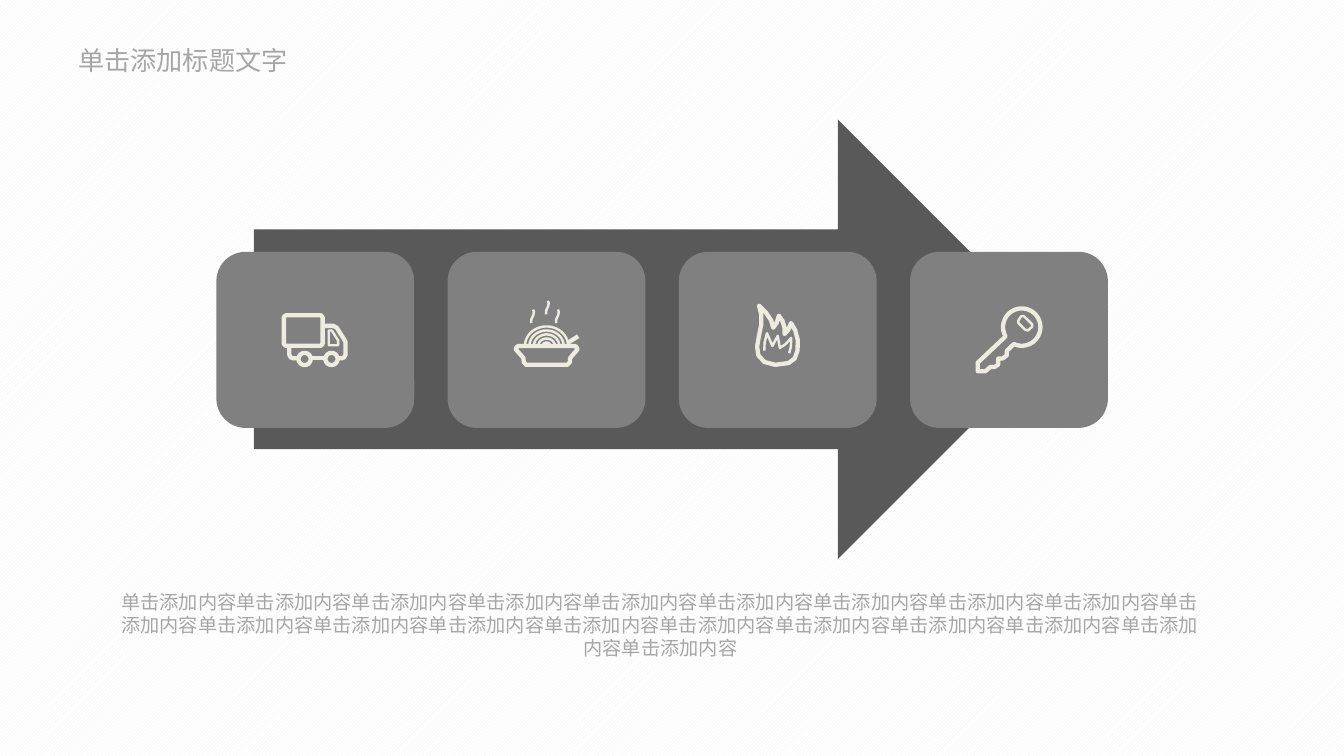
from math import cos, radians, sin

from pptx import Presentation
from pptx.dml.color import RGBColor
from pptx.enum.dml import MSO_PATTERN
from pptx.enum.shapes import MSO_SHAPE
from pptx.enum.text import MSO_AUTO_SIZE, PP_ALIGN
from pptx.util import Cm, Pt


def arc(x, y, wide, high, start, end):
    steps = range(start, end + 1, 5)
    return [(x + wide * cos(radians(a)), y + high * sin(radians(a))) for a in steps]


def shift(points, right, down):
    return [(x + right, y + down) for x, y in points]


TITLE = "单击添加标题文字"
BODY = "单击添加内容" * 20

DARK, GREY, CREAM, PALE = "595959", "808080", "EEECE1", "A6A6A6"
THICK, THIN = 2.3, 1.3
UNIT = Cm(0.0254)
SIDE = 50
ARROW = (4.8, 2.26, 15.19, 8.31)
LEFT, TOP, WIDE, HIGH, STEP = 4.09, 4.76, 3.74, 3.33, 4.37

STEAM = [(13.6, 12.5), (13.6, 10), (15.2, 6.5), (15.6, 4), (14.9, 2.5)]

TRUCK = [
    (THICK, True, [(3, 6.6), (29, 6.6), (30.4, 8), (30.4, 28), (29, 29.4),
                   (3, 29.4), (1.6, 28), (1.6, 8)]),
    (THICK, False, [(30.4, 14.6), (38.5, 14.6), (41, 16), (47, 25.5), (47.5, 27),
                    (47.5, 36), (46.5, 38), (45, 38.7), (42, 38.7)]),
    (THICK, False, [(5.6, 30), (5.6, 36), (6.5, 38), (8.5, 38.7), (12, 38.7)]),
    (THICK, False, [(22, 38.7), (32, 38.7)]),
    (THICK, True, arc(17, 39.2, 4.5, 4.5, 0, 355)),
    (THICK, True, arc(37, 39.2, 4.5, 4.5, 0, 355)),
    (THIN, True, [(35, 18), (37.3, 18), (42, 25.5), (42, 29), (35, 29)]),
]
BOWL = [
    (THICK, True, [(1.8, 31.7), (3.5, 29.6), (46.5, 29.6), (48.2, 31.7),
                   (42.5, 38.5), (42.3, 41.5), (40.5, 43.5), (9.7, 43.5),
                   (8, 41.5), (7.8, 38.5)]),
    (THICK, False, [(41, 27), (48.5, 22.3)]),
]
BOWL += [(THIN, False, arc(25, 29.6, r * 1.1, r, 180, 360))
         for r in (14.6, 11.6, 8.6, 5.6, 2.6)]
BOWL += [(THIN, False, shift(STEAM, *move)) for move in ((0, 0), (11, -6.5), (18.5, 0))]
FLAME = [
    (THICK, True, [(11, -0.5), (16, 4.5), (20, 10.5), (21.6, 16), (24.3, 12),
                   (25.8, 7), (28.5, 11), (30, 16), (30, 20.7), (32.8, 17.5),
                   (34.8, 12.5), (38, 18), (39.8, 25), (39.7, 33), (37.5, 39),
                   (33, 42.3), (23, 43.6), (15, 41.5), (10.5, 36.5), (9.6, 30),
                   (11, 22), (12.6, 14), (12.6, 6)]),
    (THIN, False, [(15, 33), (15.2, 27), (17, 20), (21, 29.5), (25, 22),
                   (26.5, 31), (31, 28), (35, 23.5), (34.8, 30), (33.5, 35)]),
]
KEY = [
    (THICK, True, arc(34.5, 15.5, 13.9, 13.9, 150, 475) + [
        (23.4, 33.2), (23.4, 36.5), (20.5, 38.8), (17, 39), (17, 43.5),
        (14, 45.3), (11, 45.3), (7.5, 48.3), (1.7, 48.3), (1.7, 42)]),
    (THIN, True, [(32, 10.5), (34, 7.5), (36, 7.3), (42.3, 13.5), (42, 15.5),
                  (39, 18), (37, 17.5), (32, 12.5)]),
]
ICONS = [TRUCK, BOWL, FLAME, KEY]


def tint(code):
    return RGBColor.from_string(code)


def block(shapes, kind, box, code):
    shape = shapes.add_shape(kind, *map(Cm, box))
    shape.shadow.inherit = False
    shape.fill.solid()
    shape.fill.fore_color.rgb = tint(code)
    shape.line.fill.background()


def stroke(shapes, left, top, width, closed, points):
    spots = [(left + x * UNIT, top + y * UNIT) for x, y in points]
    pen = shapes.build_freeform(*spots[0])
    pen.add_line_segments(spots[1:], close=closed)
    shape = pen.convert_to_shape()
    shape.shadow.inherit = False
    shape.fill.background()
    shape.line.color.rgb = tint(CREAM)
    shape.line.width = Pt(width)


def write(shapes, text, box, size, font, align=PP_ALIGN.LEFT, wrap=True, inset=(0.25, 0.13)):
    frame = shapes.add_textbox(*map(Cm, box)).text_frame
    frame.word_wrap = wrap
    frame.auto_size = MSO_AUTO_SIZE.SHAPE_TO_FIT_TEXT
    frame.margin_left = frame.margin_right = Cm(inset[0])
    frame.margin_top = frame.margin_bottom = Cm(inset[1])
    para = frame.paragraphs[0]
    para.alignment = align
    run = para.add_run()
    run.text = text
    run.font.size = Pt(size)
    run.font.name = font
    run.font.color.rgb = tint(PALE)


def main():
    deck = Presentation()
    deck.slide_width, deck.slide_height = Cm(25.4), Cm(14.29)
    slide = deck.slides.add_slide(deck.slide_layouts[6])
    shapes = slide.shapes

    back = slide.background.fill
    back.patterned()
    back.pattern = MSO_PATTERN.LIGHT_UPWARD_DIAGONAL
    back.fore_color.rgb = tint("F2F2F2")
    back.back_color.rgb = tint("FFFFFF")

    block(shapes, MSO_SHAPE.RIGHT_ARROW, ARROW, DARK)
    for i, icon in enumerate(ICONS):
        left = LEFT + i * STEP
        block(shapes, MSO_SHAPE.ROUNDED_RECTANGLE, (left, TOP, WIDE, HIGH), GREY)
        x = Cm(left) + (Cm(WIDE) - SIDE * UNIT) / 2
        y = Cm(TOP) + (Cm(HIGH) - SIDE * UNIT) / 2
        for part in icon:
            stroke(shapes, x, y, *part)

    write(shapes, BODY, (1.93, 11.02, 21.11, 1.57), 10.3, "Calibri", align=PP_ALIGN.CENTER)
    write(shapes, TITLE, (1.3, 0.74, 4.37, 0.79), 14, "Noto Sans CJK SC",
          wrap=False, inset=(0.18, 0.1))
    deck.save("out.pptx")


if __name__ == "__main__":
    main()
